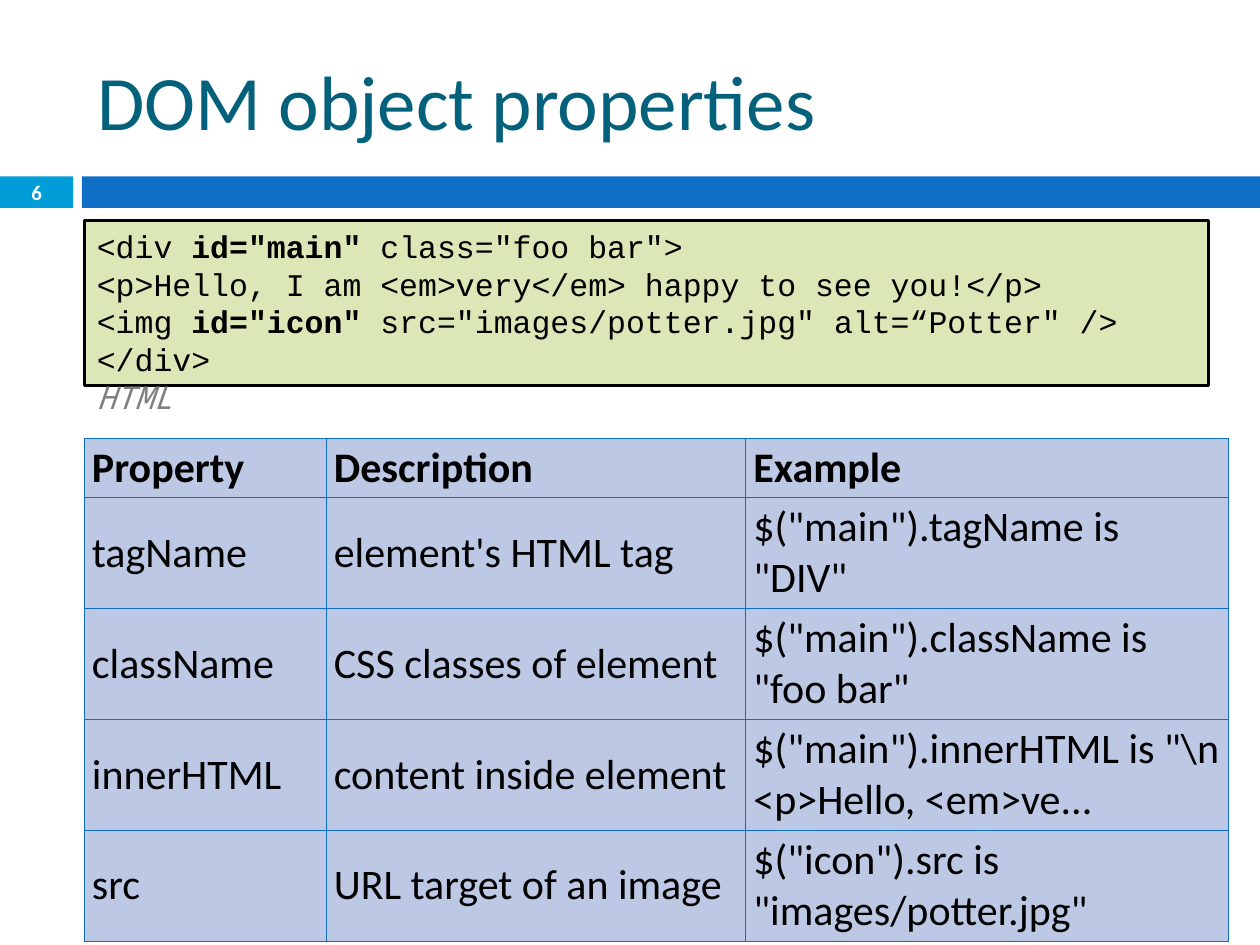
from pptx import Presentation
from pptx.dml.color import RGBColor
from pptx.enum.shapes import MSO_SHAPE
from pptx.enum.text import MSO_ANCHOR, PP_ALIGN
from pptx.oxml import parse_xml
from pptx.oxml.ns import nsdecls
from pptx.util import Inches, Pt


def rgb(color):
    return RGBColor.from_string(color)


def style(font, name, size, color, bold=False):
    font.name, font.size, font.bold = name, Pt(size), bold
    font.color.rgb = rgb(color)


prs = Presentation()
prs.slide_width, prs.slide_height = Inches(10), Inches(7.5)
s = prs.slides.add_slide(prs.slide_layouts[5])

# Bars, slide number and code box
boxes = []
for x, y, w, h, fill in [(0, 1.4, 0.58, 0.25, "009DD9"),
                         (0.65, 1.4, 9.35, 0.25, "0F6FC6"),
                         (0.67, 1.75, 8.92, 1.31, "DBE7B6")]:
    sp = s.shapes.add_shape(MSO_SHAPE.RECTANGLE, Inches(x), Inches(y), Inches(w), Inches(h))
    sp.shadow.inherit = False
    sp.fill.solid()
    sp.fill.fore_color.rgb = rgb(fill)
    sp.line.fill.background()
    boxes.append(sp)
number_bar, title_bar, code_box = boxes

tf = number_bar.text_frame
tf.margin_left = tf.margin_right = tf.margin_top = tf.margin_bottom = 0
tf.vertical_anchor = MSO_ANCHOR.MIDDLE
p = tf.paragraphs[0]
p.text = "6"
p.alignment = PP_ALIGN.CENTER
style(p.font, "Calibri", 11.9, "FFFFFF", True)

title = s.shapes.title
title.left, title.top, title.width, title.height = (Inches(v) for v in (0.67, 0.25, 8.92, 1.08))
title.text_frame.vertical_anchor = MSO_ANCHOR.MIDDLE
p = title.text_frame.paragraphs[0]
p.text = "DOM object properties"
p.alignment = PP_ALIGN.LEFT
style(p.font, "Calibri", 44, "04617B")

# Code: each line is a list of (text, bold)
code = [
    [("<div ", False), ('id="main" ', True), ('class="foo bar">', False)],
    [("<p>Hello, I am <em>very</em> happy to see you!</p>", False)],
    [("<img ", False), ('id="icon" ', True), ('src="images/potter.jpg" alt=“Potter" />', False)],
    [("</div>", False)],
]
code_box.line.color.rgb = rgb("000000")
code_box.line.width = Pt(1.5)
tf = code_box.text_frame
tf.word_wrap = True
tf.vertical_anchor = MSO_ANCHOR.TOP
for i, line in enumerate(code):
    p = tf.paragraphs[0] if i == 0 else tf.add_paragraph()
    p.alignment = PP_ALIGN.LEFT
    for text, bold in line:
        r = p.add_run()
        r.text = text
        style(r.font, "Courier New", 18, "000000", bold)
p.add_line_break()
r = p.add_run()
r.text = "HTML"
style(r.font, "Noto Sans Mono", 18, "808080")
r.font.italic = True

# Property table
rows = [
    ("Property", "Description", "Example"),
    ("tagName", "element's HTML tag", '$("main").tagName is "DIV"'),
    ("className", "CSS classes of element", '$("main").className is "foo bar"'),
    ("innerHTML", "content inside element", '$("main").innerHTML is "\\n <p>Hello, <em>ve...'),
    ("src", "URL target of an image", '$("icon").src is "images/potter.jpg"'),
]
table = s.shapes.add_table(len(rows), 3, Inches(0.67), Inches(3.48),
                           Inches(9.08), Inches(3.98)).table
for col, w in zip(table.columns, (1.92, 3.33, 3.83)):
    col.width = Inches(w)
for i, values in enumerate(rows):
    table.rows[i].height = Inches(0.47 if i == 0 else 0.88)
    for j, value in enumerate(values):
        cell = table.cell(i, j)
        cell.margin_left = cell.margin_right = Inches(0.06)
        cell.margin_top = cell.margin_bottom = Inches(0.03)
        cell.vertical_anchor = MSO_ANCHOR.MIDDLE
        p = cell.text_frame.paragraphs[0]
        p.text = value
        style(p.font, "Calibri", 24, "000000", i == 0)
        tcPr = cell._tc.get_or_add_tcPr()
        for side in ("lnL", "lnR", "lnT", "lnB"):
            tcPr.append(parse_xml(
                f'<a:{side} {nsdecls("a")} w="10000"><a:solidFill>'
                f'<a:srgbClr val="0F6FC6"/></a:solidFill></a:{side}>'))
        cell.fill.solid()
        cell.fill.fore_color.rgb = rgb("BDC8E4")

prs.save("out.pptx")
